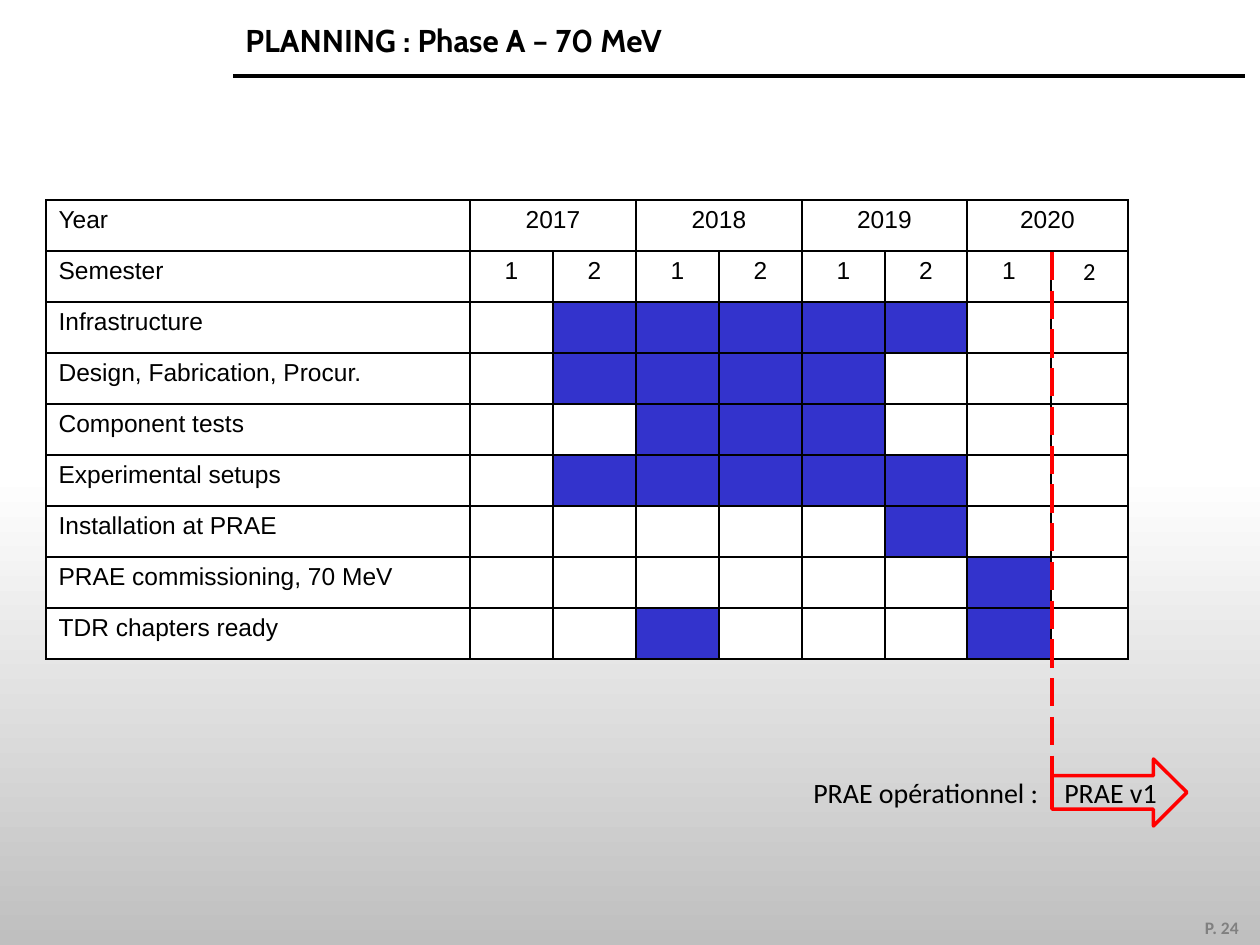
from pptx import Presentation
from pptx.dml.color import RGBColor
from pptx.enum.dml import MSO_LINE_DASH_STYLE as DASH
from pptx.enum.shapes import MSO_CONNECTOR as CONN, MSO_SHAPE as SHAPE
from pptx.enum.text import PP_ALIGN as ALIGN
from pptx.oxml.ns import qn
from pptx.util import Pt
from lxml.etree import SubElement

PX = 914400 / 126
BLACK = RGBColor(0, 0, 0)
WHITE = RGBColor(255, 255, 255)
SILVER = RGBColor(0xBF, 0xBF, 0xBF)
GREY = RGBColor(0x80, 0x80, 0x80)
BLUE = RGBColor(0x33, 0x33, 0xCC)
RED = RGBColor(255, 0, 0)

YEARS = ["2017", "2018", "2019", "2020"]
COL_WIDTHS = [424, 83, 83, 83, 83, 83, 82, 84, 77]
ROW_HEIGHT = 51
TASKS = [
    ("Infrastructure", {2, 3, 4, 5, 6}),
    ("Design, Fabrication, Procur.", {2, 3, 4, 5}),
    ("Component tests", {3, 4, 5}),
    ("Experimental setups", {2, 3, 4, 5, 6}),
    ("Installation at PRAE", {6}),
    ("PRAE commissioning, 70 MeV", {7}),
    ("TDR chapters ready", {3, 7}),
]


def px(n):
    return round(n * PX)


def style(p, size, font, color=BLACK, bold=False, align=ALIGN.LEFT):
    p.alignment = align
    for r in p.runs:
        r.font.size = Pt(size)
        r.font.name = font
        r.font.bold = bold
        r.font.color.rgb = color


def add_text(s, x, y, w, h, text, size, font, **fmt):
    tf = s.shapes.add_textbox(px(x), px(y), px(w), px(h)).text_frame
    tf.word_wrap = True
    tf.text = text
    style(tf.paragraphs[0], size, font, **fmt)


def add_line(s, x1, y1, x2, y2, color, width):
    line = s.shapes.add_connector(CONN.STRAIGHT, px(x1), px(y1), px(x2), px(y2))
    line.line.color.rgb = color
    line.line.width = Pt(width)
    SubElement(line._element.spPr, qn("a:effectLst"))
    return line


def add_background(s):
    fill = s.background.fill
    fill.gradient()
    fill.gradient_angle = 270
    for stop, pos, color in zip(fill.gradient_stops, (0.5, 1), (WHITE, SILVER)):
        stop.position = pos
        stop.color.rgb = color


def add_header(s, x, y, w):
    add_line(s, x + w, y + 61, x, y + 61, BLACK, 2.5)
    add_text(s, x, y, 685, 50, "PLANNING : Phase A – 70 MeV", 18, "Cabin", bold=True)


def set_cell(cell, text="", color=WHITE, align=ALIGN.CENTER, font="Arial"):
    tcPr = cell._tc.get_or_add_tcPr()
    for side in ("lnL", "lnR", "lnT", "lnB"):
        ln = SubElement(tcPr, qn(f"a:{side}"), w=str(Pt(1)))
        fill = SubElement(ln, qn("a:solidFill"))
        SubElement(fill, qn("a:srgbClr"), val=str(BLACK))
    cell.fill.solid()
    cell.fill.fore_color.rgb = color
    if text:
        cell.text = text
        style(cell.text_frame.paragraphs[0], 14, font, align=align)
    else:
        cell.margin_top = cell.margin_bottom = 0


def add_schedule(s, x, y):
    rows, cols = len(TASKS) + 2, len(COL_WIDTHS)
    frame = s.shapes.add_table(rows, cols, px(x), px(y),
                               px(sum(COL_WIDTHS)), px(rows * ROW_HEIGHT))
    table = frame.table
    table.first_row = table.horz_banding = False
    for col, width in zip(table.columns, COL_WIDTHS):
        col.width = px(width)
    for row in table.rows:
        row.height = px(ROW_HEIGHT)

    labels = ["Year", "Semester"] + [name for name, _ in TASKS]
    for i, label in enumerate(labels):
        set_cell(table.cell(i, 0), label, align=ALIGN.LEFT)
    for j in range(1, cols):
        year = YEARS[j // 2] if j % 2 else ""
        set_cell(table.cell(0, j), year)
        font = "Calibri" if j == cols - 1 else "Arial"
        set_cell(table.cell(1, j), "1" if j % 2 else "2", font=font)
        for i, (_, active) in enumerate(TASKS, 2):
            set_cell(table.cell(i, j), color=BLUE if j in active else WHITE)
    for j in range(1, cols, 2):
        table.cell(0, j).merge(table.cell(0, j + 1))


def add_milestone(s, x, y, h):
    add_line(s, x, y, x, y + h, RED, 2).line.dash_style = DASH.LONG_DASH
    top = y + h - 39
    add_text(s, x, top, 152, 46, "PRAE v1", 16, "Calibri")
    add_text(s, x - 251, top, 252, 46, "PRAE opérationnel :", 16, "Calibri")
    arrow = s.shapes.add_shape(SHAPE.RIGHT_ARROW, px(x), px(top - 10), px(135), px(67))
    arrow.shadow.inherit = False
    arrow.fill.background()
    arrow.line.color.rgb = RED
    arrow.line.width = Pt(2)


def main():
    prs = Presentation()
    prs.slide_width, prs.slide_height = px(1260), px(945)
    s = prs.slides.add_slide(prs.slide_layouts[6])
    add_background(s)
    add_text(s, 1143, 911, 108, 34, "P. 24", 10, "Calibri",
             color=GREY, bold=True, align=ALIGN.RIGHT)
    add_header(s, 233, 15, 1012)
    add_schedule(s, 46, 200)
    add_milestone(s, 1052, 252, 556)
    prs.save("out.pptx")


if __name__ == "__main__":
    main()
